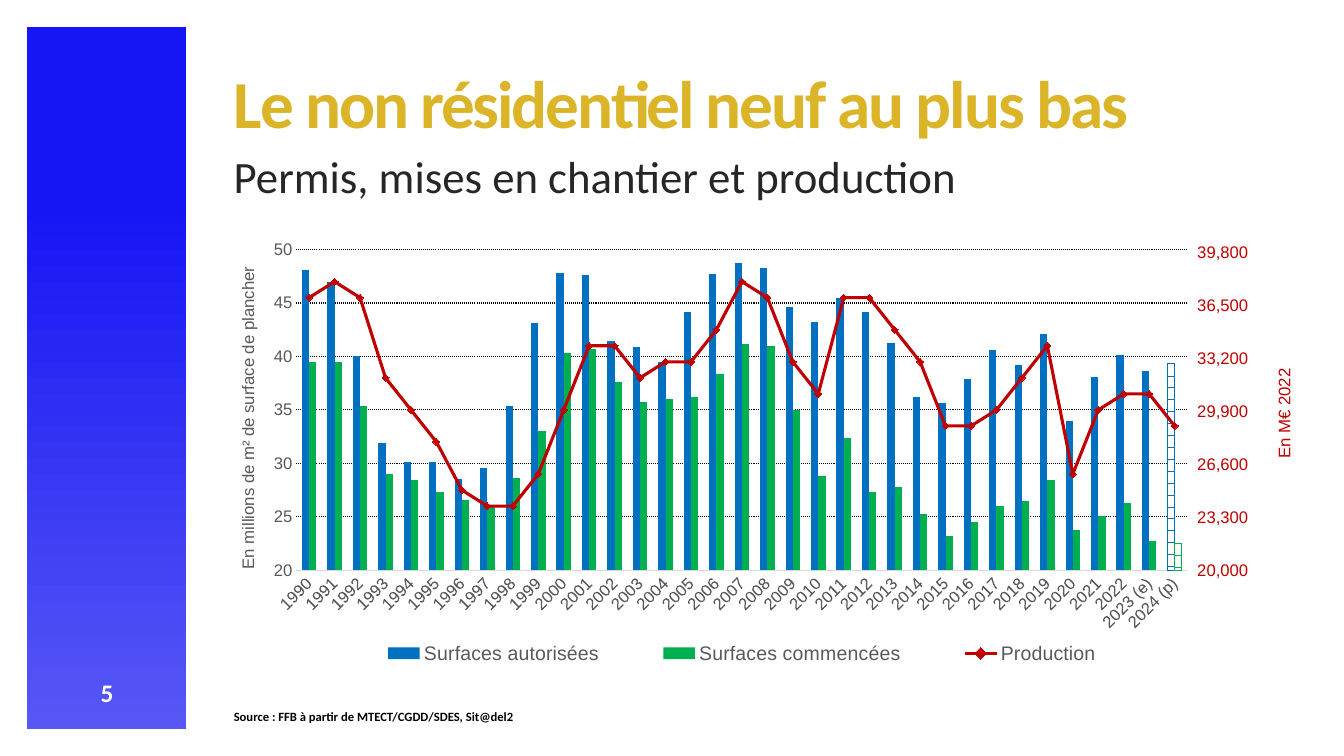
"""Build the slide on new non-residential building: permits, starts and output."""
from pptx import Presentation
from pptx.chart.axis import ValueAxis
from pptx.chart.data import CategoryChartData
from pptx.dml.color import RGBColor
from pptx.enum.chart import XL_CHART_TYPE as ChartType, XL_LEGEND_POSITION as LegendPosition
from pptx.enum.chart import XL_MARKER_STYLE as Marker, XL_TICK_MARK as Tick
from pptx.enum.dml import MSO_LINE as Dash, MSO_PATTERN as Pattern
from pptx.enum.shapes import MSO_SHAPE as Shape
from pptx.enum.text import MSO_ANCHOR as Anchor, PP_ALIGN as Align
from pptx.oxml import parse_xml
from pptx.oxml.ns import nsdecls, qn
from pptx.util import Inches, Pt

TITLE = "Le non résidentiel neuf au plus bas"
SUBTITLE = "Permis, mises en chantier et production"
SOURCE = "Source : FFB à partir de MTECT/CGDD/SDES, Sit@del2"
PAGE_NUMBER = "5"
LEFT_UNIT = "En millions de m² de surface de plancher"
RIGHT_UNIT = "En M€ 2022"

YEARS = [str(year) for year in range(1990, 2023)] + ["2023 (e)", "2024 (p)"]
PERMITS = [48.1, 47, 40, 31.9, 30.1, 30.1, 28.5, 29.6, 35.4, 43.1, 47.8, 47.6,
           41.4, 40.9, 39.5, 44.2, 47.7, 48.7, 48.3, 44.6, 43.2, 45.5, 44.2, 41.3,
           36.2, 35.6, 37.9, 40.6, 39.2, 42.1, 34, 38.1, 40.1, 38.6, 39.3]
STARTS = [39.5, 39.5, 35.4, 29, 28.4, 27.3, 26.6, 25.9, 28.6, 33, 40.3, 40.7,
          37.6, 35.7, 36, 36.2, 38.4, 41.2, 41, 35, 28.8, 32.4, 27.3, 27.8,
          25.3, 23.2, 24.5, 26, 26.5, 28.4, 23.8, 25.1, 26.3, 22.7, 22.5]
OUTPUT = [37000, 38000, 37000, 32000, 30000, 28000, 25000, 24000, 24000, 26000,
          30000, 34000, 34000, 32000, 33000, 33000, 35000, 38000, 37000, 33000,
          31000, 37000, 37000, 35000, 33000, 29000, 29000, 30000, 32000, 34000,
          26000, 30000, 31000, 31000, 29000]
SERIES = [("Surfaces autorisées", PERMITS, "0070C0"),
          ("Surfaces commencées", STARTS, "00B050"),
          ("Production", OUTPUT, "C00000")]

GREY, RED, WHITE = "595959", "C00000", "FFFFFF"
MARGIN, BAND_WIDTH, BAND_HEIGHT = 0.27, 1.58, 6.96
LEFT, WIDTH = 2.22, 10.66
PLOT_SHARE = (0.068, 0.063, 0.834, 0.701)
LEGEND_SHARE = (0.1, 0.91, 0.77, 0.07)
LEFT_UNIT_SHARE = (0.01, 0.09)
RIGHT_UNIT_SHARE = (0.98, 0.315)


def rgb(value):
    return RGBColor.from_string(value)


def style_font(font, size, color, name="Calibri", bold=False):
    font.size, font.name, font.bold = Pt(size), name, bold
    font.color.rgb = rgb(color)


def write(box, text, size, color, bold=False, align=Align.LEFT, spacing=0.9):
    frame = box.text_frame
    frame.word_wrap = True
    frame.vertical_anchor = Anchor.TOP
    frame.text = text
    para = frame.paragraphs[0]
    para.alignment, para.line_spacing, para.space_before = align, spacing, Pt(0)
    span = para.runs[0]
    style_font(span.font, size, color, bold=bold)
    return span


def add_text(page, area, *style, **options):
    box = page.shapes.add_textbox(*map(Inches, area))
    write(box, *style, **options)


def add_band(page):
    band = page.shapes.add_shape(
        Shape.RECTANGLE, *map(Inches, (MARGIN, MARGIN, BAND_WIDTH, BAND_HEIGHT)))
    band.shadow.inherit = False
    band.line.fill.background()
    band.fill.gradient()
    band.fill.gradient_angle = 270
    for stop, (position, color) in zip(band.fill.gradient_stops,
                                       [(0.25, "1615F5"), (1, "5757F5")]):
        stop.position, stop.color.rgb = position, rgb(color)


def set_layout(parent, index, share, inner=False):
    for old in parent.findall(qn("c:layout")):
        parent.remove(old)
    target = '<c:layoutTarget val="inner"/>' if inner else ""
    modes = "".join(f'<c:{side}Mode val="edge"/>' for side in "xy")
    sizes = "".join(f'<c:{side} val="{value}"/>' for side, value in zip("xywh", share))
    parent.insert(index, parse_xml(
        f'<c:layout {nsdecls("c")}><c:manualLayout>{target}{modes}{sizes}'
        '</c:manualLayout></c:layout>'))


def move_to_right_axis(chart):
    """Turn the last series into a line on a second value axis, and return that axis."""
    plot_area = chart.plots[0]._element.getparent()
    series = chart.plots[0]._element.findall(qn("c:ser"))[-1]
    for tag in ("c:invertIfNegative", "c:spPr"):
        for child in series.findall(qn(tag)):
            series.remove(child)
    line_chart = parse_xml(
        f'<c:lineChart {nsdecls("c")}><c:grouping val="standard"/><c:varyColors val="0"/>'
        '<c:marker val="1"/><c:axId val="5001"/><c:axId val="5002"/></c:lineChart>')
    line_chart.insert(2, series)
    chart.plots[0]._element.addnext(line_chart)
    axes = [parse_xml(
        f'<c:{kind} {nsdecls("c")}><c:axId val="{own}"/><c:scaling>'
        f'<c:orientation val="minMax"/></c:scaling><c:delete val="{hidden}"/>'
        f'<c:axPos val="{side}"/><c:tickLblPos val="nextTo"/><c:crossAx val="{other}"/>'
        f'<c:crosses val="{crossing}"/></c:{kind}>')
        for kind, own, hidden, side, other, crossing in [
            ("valAx", 5002, 0, "r", 5001, "max"), ("catAx", 5001, 1, "b", 5002, "autoZero")]]
    last_axis = plot_area.findall(qn("c:valAx"))[-1]
    for axis in reversed(axes):
        last_axis.addnext(axis)
    return ValueAxis(axes[0])


def style_value_axis(axis, limits, color, unit, unit_share, tick):
    axis.minimum_scale, axis.maximum_scale, axis.major_unit = limits
    axis.major_tick_mark, axis.minor_tick_mark = tick, Tick.NONE
    axis.format.line.fill.background()
    labels = axis.tick_labels
    labels.number_format, labels.number_format_is_linked = "#,##0", False
    style_font(labels.font, 12, color, "Arial")
    title = axis.axis_title
    title.text_frame.text = unit
    style_font(title.text_frame.paragraphs[0].runs[0].font, 12, color, "Arial")
    body = title.text_frame._txBody.find(qn("a:bodyPr"))
    body.set("rot", "-5400000")
    body.set("vert", "horz")
    set_layout(title._element, 1, unit_share)


def style_bars(series, color):
    series.format.fill.solid()
    series.format.fill.fore_color.rgb = rgb(color)
    forecast = series.points[len(YEARS) - 1].format
    forecast.fill.patterned()
    forecast.fill.pattern = Pattern.HORIZONTAL_BRICK
    forecast.fill.fore_color.rgb, forecast.fill.back_color.rgb = rgb(color), rgb(WHITE)
    forecast.line.color.rgb = rgb(color)


def style_line(series, color):
    series.smooth = False
    series.format.line.color.rgb, series.format.line.width = rgb(color), Pt(2.25)
    marker = series.marker
    marker.style, marker.size = Marker.DIAMOND, 5
    marker.format.fill.solid()
    marker.format.fill.fore_color.rgb = rgb(color)
    marker.format.line.color.rgb = rgb(color)


def add_building_chart(page):
    data = CategoryChartData()
    data.categories = YEARS
    for name, values, _ in SERIES:
        data.add_series(name, values)
    chart = page.shapes.add_chart(ChartType.COLUMN_CLUSTERED,
                                  *map(Inches, (LEFT, 2.19, WIDTH, 4.54)), data).chart
    style_font(chart.font, 10, "000000")
    chart.has_title = False
    left_axis = chart.value_axis
    right_axis = move_to_right_axis(chart)
    bars, lines = chart.plots
    bars.gap_width, bars.overlap, bars.vary_by_categories = 150, 0, False
    for series, (_, _, color) in zip(bars.series, SERIES):
        style_bars(series, color)
    style_line(lines.series[0], SERIES[-1][2])

    years = chart.category_axis
    years.major_tick_mark = years.minor_tick_mark = Tick.NONE
    years.format.line.color.rgb, years.format.line.width = rgb("D9D9D9"), Pt(0.75)
    style_font(years.tick_labels.font, 12, GREY, "Arial")
    years._element.find(qn("c:txPr")).find(qn("a:bodyPr")).set("rot", "-2700000")
    style_value_axis(left_axis, (20, 50, 5), GREY, LEFT_UNIT, LEFT_UNIT_SHARE, Tick.NONE)
    style_value_axis(right_axis, (20000, 40000, 3300), RED, RIGHT_UNIT, RIGHT_UNIT_SHARE,
                     Tick.OUTSIDE)
    grid = left_axis.major_gridlines.format.line
    grid.color.rgb, grid.width, grid.dash_style = rgb("000000"), Pt(0.75), Dash.ROUND_DOT

    chart.has_legend = True
    legend = chart.legend
    legend.position, legend.include_in_layout = LegendPosition.BOTTOM, False
    style_font(legend.font, 14, GREY, "Arial")
    set_layout(legend._element, 1, LEGEND_SHARE)
    set_layout(bars._element.getparent(), 0, PLOT_SHARE, inner=True)


def main():
    deck = Presentation()
    deck.slide_width, deck.slide_height = Inches(13.33), Inches(7.5)
    page = deck.slides.add_slide(deck.slide_layouts[5])
    add_band(page)
    title = page.shapes.title
    title.left, title.top, title.width, title.height = map(Inches, (LEFT, 0.65, WIDTH, 0.83))
    span = write(title, TITLE, 48, "DBB428", bold=True)
    span.font._element.set("spc", "-150")
    add_text(page, (MARGIN, 6.67, BAND_WIDTH, 0.4), PAGE_NUMBER, 18, WHITE,
             bold=True, align=Align.CENTER, spacing=1.0)
    add_text(page, (LEFT, 1.49, WIDTH, 0.5), SUBTITLE, 32, "262626")
    add_text(page, (LEFT, 7, 8.98, 0.24), SOURCE, 9, "000000", bold=True)
    add_building_chart(page)
    deck.save("out.pptx")


if __name__ == "__main__":
    main()
